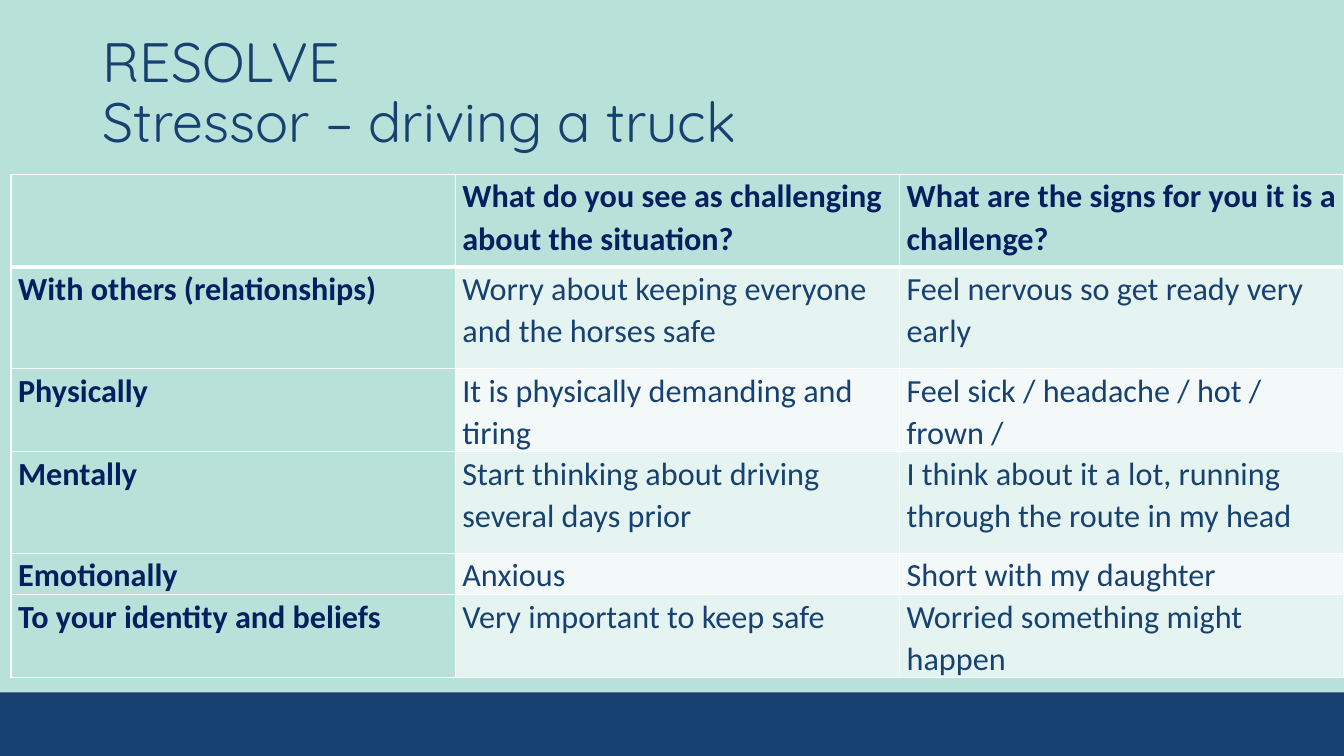
from lxml import etree
from pptx import Presentation, util as u
from pptx.dml.color import RGBColor
from pptx.enum import shapes, text
from pptx.oxml import ns

THEME = {
    "mint": "B8E1DA", "navy": "164170", "ink": "002060", "line": "FFFFFF",
    "bands": ("E6F4F1", "F3F9F8"),
    "head": ("Quicksand", 39.6), "body": ("Calibri", 23),
}
ROWS = [
    (0.92, "", "What do you see as challenging about the situation?",
     "What are the signs for you it is a challenge?"),
    (1.01, "With others (relationships)",
     "Worry about keeping everyone and the horses safe",
     "Feel nervous so get ready very early"),
    (0.67, "Physically", "It is physically demanding and tiring",
     "Feel sick / headache / hot / frown /"),
    (1.01, "Mentally", "Start thinking about driving several days prior",
     "I think about it a lot, running through the route in my head"),
    (0.33, "Emotionally", "Anxious", "Short with my daughter"),
    (0.67, "To your identity and beliefs", "Very important to keep safe",
     "Worried something might happen"),
]


def write(para, words, style, color, bold=False):
    run = para.add_run()
    run.text = words
    run.font.name, size = THEME[style]
    run.font.size = u.Pt(size)
    run.font.bold = bold
    run.font.color.rgb = RGBColor.from_string(THEME[color])


def edge(cell, side, width):
    """Draw one border of a cell; side is L, R, T or B."""
    props = cell._tc.get_or_add_tcPr()
    line = etree.SubElement(props, ns.qn("a:ln" + side), w=str(u.Pt(width)))
    fill = etree.SubElement(line, ns.qn("a:solidFill"))
    etree.SubElement(fill, ns.qn("a:srgbClr"), val=THEME["line"])


deck = Presentation()
deck.slide_width, deck.slide_height = u.Inches(13.33), u.Inches(7.5)
wide, high = deck.slide_width, deck.slide_height
slide = deck.slides.add_slide(deck.slide_layouts[6])
back = slide.background.fill
back.solid()
back.fore_color.rgb = RGBColor.from_string(THEME["mint"])

# Footer band
top = int(high * 0.916)
band = slide.shapes.add_shape(
    shapes.MSO_SHAPE.RECTANGLE, 0, top, wide, high - top)
band.shadow.inherit = False
band.fill.solid()
band.fill.fore_color.rgb = RGBColor.from_string(THEME["navy"])
band.line.fill.background()

# Title
title = slide.shapes.add_textbox(
    u.Inches(0.92), u.Inches(0.4), u.Inches(11.5), u.Inches(1.07))
frame = title.text_frame
frame.word_wrap = True
frame.vertical_anchor = text.MSO_ANCHOR.MIDDLE
para = frame.paragraphs[0]
para.line_spacing = 0.9
write(para, "RESOLVE", "head", "navy")
para.add_line_break()
write(para, "Stressor – driving a truck", "head", "navy")

# Table: three equal columns reaching the right edge
left = u.Inches(0.11)
tall = u.Inches(sum(row[0] for row in ROWS))
grid = slide.shapes.add_table(
    len(ROWS), 3, left, u.Inches(1.73), wide - left, tall).table
for col in grid.columns:
    col.width = (wide - left) // 3

for r, (height, *words) in enumerate(ROWS):
    grid.rows[r].height = u.Inches(height)
    for c, word in enumerate(words):
        cell = grid.cell(r, c)
        label = r == 0 or c == 0
        cell.margin_left = cell.margin_right = u.Inches(0.07)
        cell.margin_top = cell.margin_bottom = 0
        for side in "LRTB":
            thick = (r, side) in ((0, "B"), (1, "T"))
            edge(cell, side, 3 if thick else 1)
        cell.fill.solid()
        shade = THEME["mint"] if label else THEME["bands"][(r - 1) % 2]
        cell.fill.fore_color.rgb = RGBColor.from_string(shade)
        if word:
            para = cell.text_frame.paragraphs[0]
            para.line_spacing = 1.07
            para.space_after = u.Pt(8)
            write(para, word, "body", "ink" if label else "navy", label)

deck.save("out.pptx")
